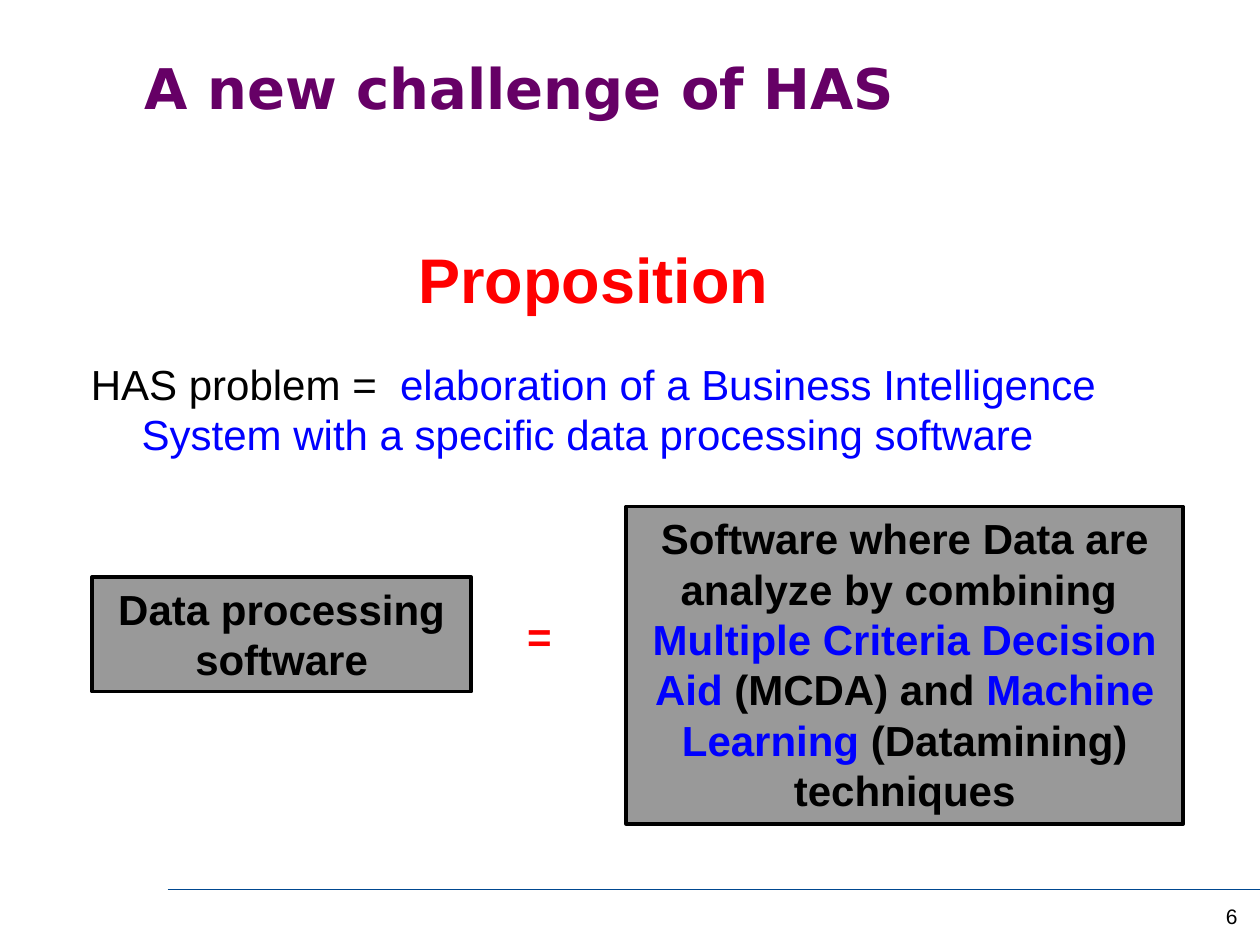
from pptx import Presentation
from pptx.dml.color import RGBColor
from pptx.enum.shapes import MSO_CONNECTOR, MSO_SHAPE
from pptx.enum.text import MSO_ANCHOR, MSO_AUTO_SIZE, PP_ALIGN
from pptx.oxml.ns import qn
from pptx.util import Inches, Pt
from lxml import etree

BLACK = RGBColor(0x00, 0x00, 0x00)
RED = RGBColor(0xFF, 0x00, 0x00)
BLUE = RGBColor(0x00, 0x00, 0xFF)
PURPLE = RGBColor(0x66, 0x00, 0x66)
GREY = RGBColor(0x99, 0x99, 0x99)
NAVY = RGBColor(0x00, 0x48, 0x90)


def write(paragraph, runs, size=24, bold=True, align=PP_ALIGN.CENTER, font="Arial"):
    """Fill a paragraph with (text, colour) runs."""
    paragraph.alignment = align
    for text, color in runs:
        run = paragraph.add_run()
        run.text = text
        run.font.name = font
        run.font.size = Pt(size)
        run.font.bold = bold
        run.font.color.rgb = color


def add_text_box(slide, left, top, width, height):
    box = slide.shapes.add_textbox(
        Inches(left), Inches(top), Inches(width), Inches(height))
    box.text_frame.word_wrap = True
    return box.text_frame


def add_title(slide, left, top, width, height):
    title = slide.shapes.title
    title.left, title.top = Inches(left), Inches(top)
    title.width, title.height = Inches(width), Inches(height)
    title.text_frame.vertical_anchor = MSO_ANCHOR.MIDDLE
    write(title.text_frame.paragraphs[0], [("A new challenge of HAS", PURPLE)],
          size=32, align=PP_ALIGN.LEFT, font="DejaVu Sans")


def add_proposition(slide, left, top, width, height):
    frame = add_text_box(slide, left, top, width, height)
    write(frame.paragraphs[0], [("Proposition", RED)], size=36)
    problem = frame.add_paragraph()
    problem.space_before = Pt(24)
    write(problem, [
        ("HAS problem = \u00a0".replace("\u00a0", " "), BLACK),
        ("elaboration of a Business Intelligence System "
         "with a specific data processing software ", BLUE),
    ], bold=False)


def add_grey_box(slide, left, top, width, height, runs):
    box = slide.shapes.add_shape(
        MSO_SHAPE.RECTANGLE, Inches(left), Inches(top), Inches(width), Inches(height))
    box.shadow.inherit = False
    box.fill.solid()
    box.fill.fore_color.rgb = GREY
    box.line.color.rgb = BLACK
    box.line.width = Pt(2)
    frame = box.text_frame
    frame.word_wrap = True
    frame.auto_size = MSO_AUTO_SIZE.SHAPE_TO_FIT_TEXT
    frame.vertical_anchor = MSO_ANCHOR.TOP
    write(frame.paragraphs[0], runs)


def add_equation(slide, left, top):
    """Place the two grey boxes with the equals sign between them."""
    add_grey_box(slide, left, top + 0.56, 3.01, 0.91,
                 [("Data processing software", BLACK)])
    equals = add_text_box(slide, left + 3.01, top + 0.78, 1.08, 0.5)
    write(equals.paragraphs[0], [("=", RED)])
    add_grey_box(slide, left + 4.24, top, 4.42, 2.52, [
        ("Software where Data are analyze by combining  ", BLACK),
        ("Multiple Criteria Decision Aid ", BLUE),
        ("(MCDA) and ", BLACK),
        ("Machine Learning", BLUE),
        (" (Datamining) techniques", BLACK),
    ])


def add_footer(slide, left, top, right):
    rule = slide.shapes.add_connector(
        MSO_CONNECTOR.STRAIGHT, Inches(left), Inches(top), Inches(right), Inches(top))
    rule.line.color.rgb = NAVY
    rule.line.width = Pt(0.75)
    etree.SubElement(rule.element.spPr, qn("a:effectLst"))
    number = add_text_box(slide, right - 1.33, top + 0.06, 1.25, 0.5)
    write(number.paragraphs[0], [("6", BLACK)], size=12, bold=False,
          align=PP_ALIGN.RIGHT)


def main():
    presentation = Presentation()
    presentation.slide_width = Inches(10)
    presentation.slide_height = Inches(7.5)
    slide = presentation.slides.add_slide(presentation.slide_layouts[5])
    add_footer(slide, 1.33, 7.06, 10)
    add_title(slide, 1.05, 0.07, 8.79, 1.25)
    add_proposition(slide, 0.03, 1.86, 9.36, 2.15)
    add_equation(slide, 0.73, 4.02)
    presentation.save("out.pptx")


if __name__ == "__main__":
    main()
